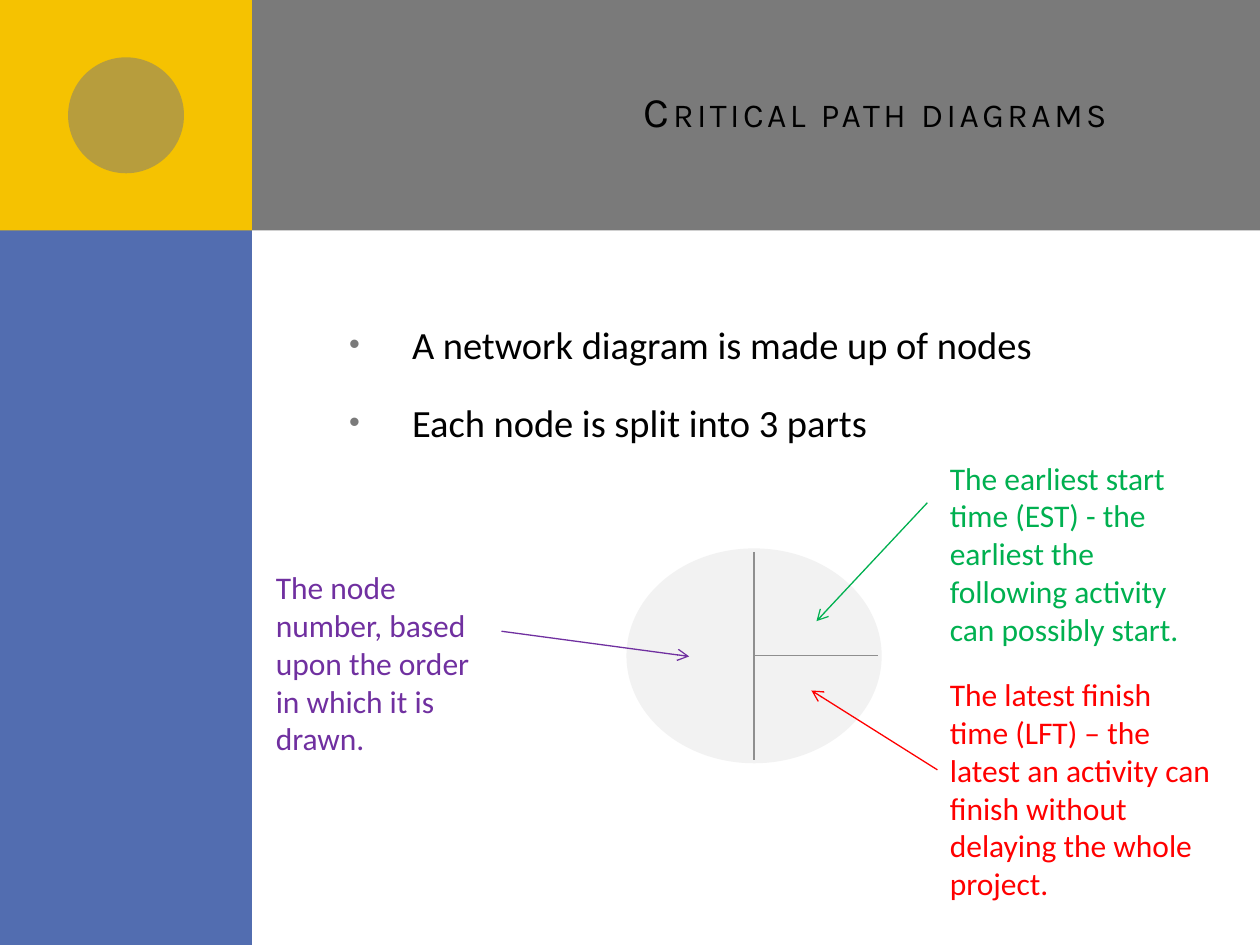
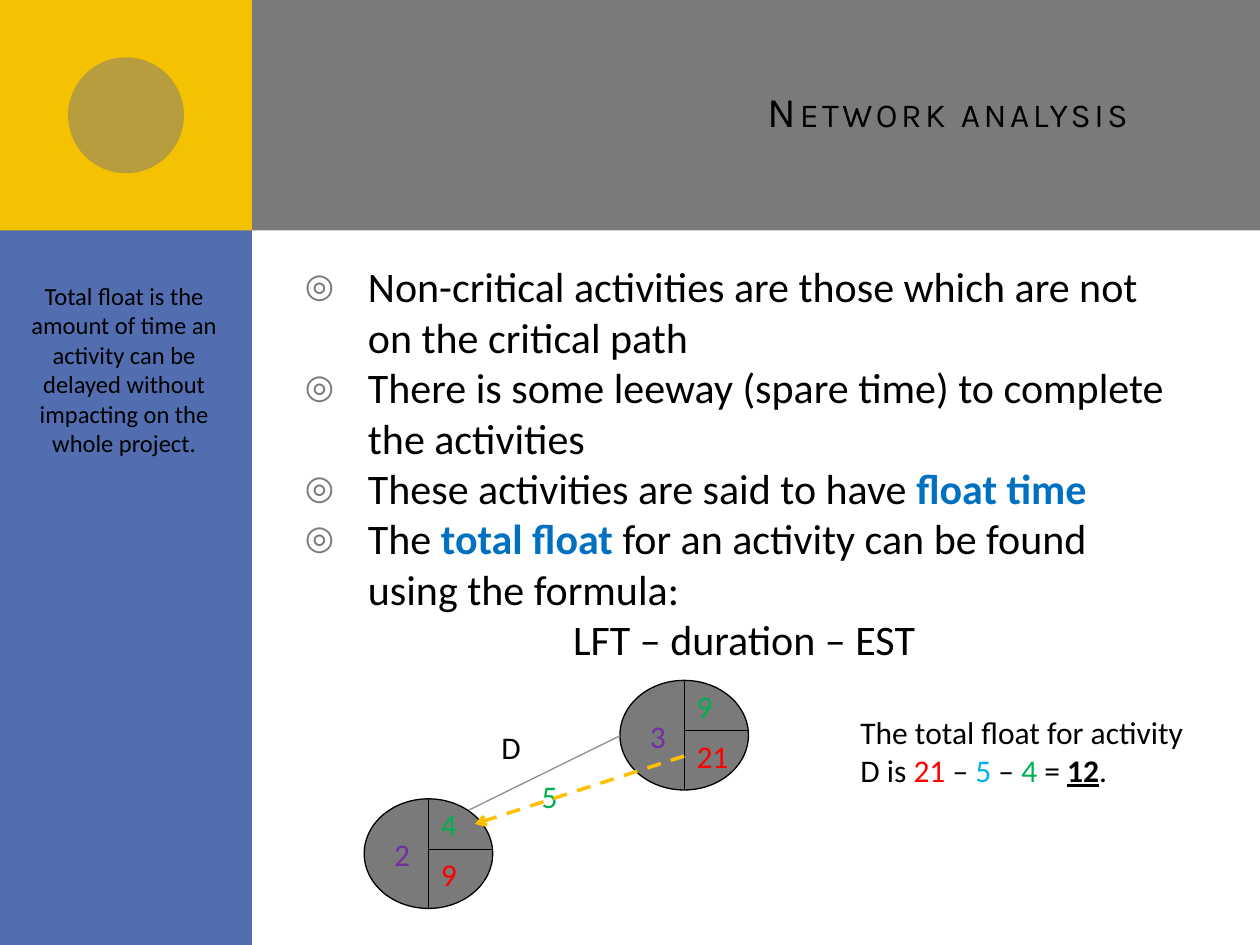
from lxml.etree import SubElement
from pptx import Presentation
from pptx.dml.color import RGBColor
from pptx.enum.dml import MSO_LINE
from pptx.enum.shapes import MSO_CONNECTOR, MSO_SHAPE
from pptx.enum.text import MSO_ANCHOR, MSO_AUTO_SIZE, PP_ALIGN
from pptx.oxml.ns import qn
from pptx.util import Inches, Pt

BLACK = RGBColor(0, 0, 0)
GREY = RGBColor(0x7A, 0x7A, 0x7A)
RULE = RGBColor(0x8F, 0x8F, 0x8F)
PALE = RGBColor(0xF2, 0xF2, 0xF2)
BLUE = RGBColor(0x52, 0x6D, 0xB0)
GOLD = RGBColor(0xF5, 0xC2, 0x01)
AMBER = RGBColor(0xFF, 0xC0, 0x00)
PURPLE = RGBColor(0x70, 0x30, 0xA0)
GREEN = RGBColor(0x00, 0xB0, 0x50)
RED = RGBColor(0xFF, 0, 0)
TERM = RGBColor(0x00, 0x70, 0xC0)
SKY = RGBColor(0x00, 0xB0, 0xF0)

COLS, ROWS = 100, 75
CELL = Inches(0.1)
HEAD, SIDE = 18.3, 20  # rows of the top band, columns of the side band


def grid(*cells):
    """Turn columns and rows into lengths."""
    return [round(cell * CELL) for cell in cells]


def place(shape, box):
    shape.left, shape.top, shape.width, shape.height = grid(*box)


def draw(slide, kind, box, fill, line=None, width=0.75):
    shape = slide.shapes.add_shape(kind, *grid(*box))
    shape.shadow.inherit = False
    shape.fill.solid()
    shape.fill.fore_color.rgb = fill
    if line is None:
        shape.line.fill.background()
    else:
        shape.line.color.rgb = line
        shape.line.width = Pt(width)
    return shape


def link(slide, start, end, color, width=0.75, arrow=False, dash=None):
    line = slide.shapes.add_connector(MSO_CONNECTOR.STRAIGHT, *grid(*start, *end))
    line.line.color.rgb = color
    line.line.width = Pt(width)
    if dash:
        line.line.dash_style = dash
    props = line.element.spPr
    if arrow:
        SubElement(props.find(qn("a:ln")), qn("a:tailEnd"), type="arrow")
    SubElement(props, qn("a:effectLst"))


def write(para, text, size, color=BLACK, face="Calibri"):
    """Fill a paragraph with a string or with (text, colour, bold, underline) runs."""
    runs = [(text,)] if isinstance(text, str) else text
    for words, *_ in runs:
        para.add_run().text = words
    for part in (para, *para.runs):
        part.font.name = face
        part.font.size = Pt(size)
        part.font.bold = False
        part.font.color.rgb = color
    for run, (_, *marks) in zip(para.runs, runs):
        tint, bold, under = (marks + [color, False, False][len(marks):])
        run.font.color.rgb = tint
        run.font.bold = bold
        run.font.underline = under


def note(slide, box, text, color=BLACK, size=18, align=PP_ALIGN.LEFT):
    frame = slide.shapes.add_textbox(*grid(*box)).text_frame
    frame.word_wrap = True
    frame.auto_size = MSO_AUTO_SIZE.SHAPE_TO_FIT_TEXT
    frame.paragraphs[0].alignment = align
    write(frame.paragraphs[0], text, size, color)


def head(slide, text):
    title = slide.shapes.title
    frame = title.text_frame
    frame.vertical_anchor = MSO_ANCHOR.MIDDLE
    frame.auto_size = MSO_AUTO_SIZE.NONE
    frame.paragraphs[0].alignment = PP_ALIGN.RIGHT
    write(frame.paragraphs[0], text, 24, face="Karla")
    for props in title.element.xpath(".//a:rPr"):
        props.set("cap", "small")
        props.set("spc", "200")


def items(slide, lines, size, mark, gap=0, last=None):
    """Fill the body with bulleted lines and an optional centred last line."""
    frame = slide.placeholders[1].text_frame
    frame.auto_size = MSO_AUTO_SIZE.NONE
    for row, text in enumerate(lines + ([last] if last else [])):
        para = frame.add_paragraph() if row else frame.paragraphs[0]
        para.space_before = Pt(gap)
        props = para._p.get_or_add_pPr()
        props.set("marL", str(Inches(0.5)))
        props.set("indent", str(-Inches(0.5)))
        if text is last:
            para.alignment = PP_ALIGN.CENTER
            SubElement(props, qn("a:buNone"))
        else:
            tint = SubElement(props, qn("a:buClr"))
            SubElement(tint, qn("a:srgbClr"), val=str(GREY))
            SubElement(props, qn("a:buSzPct"), val="80000")
            SubElement(props, qn("a:buChar"), char=mark)
        write(para, text, size)


def node(slide, kind, box, split, fill, edge, width, rule):
    """Draw a node: left half, and a right half cut at the given row."""
    x, y, w, h = box
    mid = x + w / 2
    draw(slide, kind, box, fill, edge, width)
    link(slide, (mid, y), (mid, y + h), rule)
    link(slide, (mid, y + split), (x + w, y + split), rule)


def event(slide, x, y, name, start, finish):
    """Draw a small node with its number, EST and LFT."""
    w, split = 10.2, 4
    node(slide, MSO_SHAPE.FLOWCHART_CONNECTOR, (x, y, w, 8.7), split,
         GREY, BLACK, 0.75, BLACK)
    mid = x + w / 2
    note(slide, (x + 1.4, y + 2.4, 2.9, 4), name, PURPLE)
    note(slide, (mid, y, 4.4, 4), start, GREEN)
    note(slide, (mid, y + split, 5, 4), finish, RED)


def dress(layout, slide):
    """Put the shared bands on the layout and place its title and body."""
    rect = MSO_SHAPE.RECTANGLE
    size = 9.2
    bands = [
        draw(slide, rect, (5, 0, COLS - 5, HEAD), GREY),
        draw(slide, rect, (0, 0, SIDE, ROWS), BLUE),
        draw(slide, rect, (0, 0, SIDE, HEAD), GOLD),
        draw(slide, MSO_SHAPE.OVAL,
             ((SIDE - size) / 2, (HEAD - size) / 2, size, size), GREY),
    ]
    tint = bands[-1].element.spPr.find(".//" + qn("a:srgbClr"))
    SubElement(tint, qn("a:alpha"), val="50000")
    for rank, band in enumerate(bands):
        band.element.xpath(".//p:cNvPr")[0].set("id", str(50 + rank))
        layout.shapes.element.insert(2 + rank, band.element)
    place(layout.placeholders[0], (26.7, 2.5, 68.3, 12.5))
    place(layout.placeholders[1], (26.7, 25, 68.3, 42))


def paths(slide):
    head(slide, "Critical path diagrams")
    items(slide, ["A network diagram is made up of nodes",
                  "Each node is split into 3 parts"], 22, "•", 18)
    node(slide, MSO_SHAPE.OVAL, (50, 43.8, 19.7, 16.5), 8.25, PALE, PALE, 4, RULE)
    parts = [
        (PURPLE, (39.8, 50.1), (54.7, 52.1), (20.9, 44.6, 18.1, 16.2),
         "The node number, based upon the order in which it is drawn."),
        (GREEN, (73.6, 39.9), (64.8, 49.3), (74.4, 35.9, 20.5, 16.2),
         "The earliest start time (EST) - the earliest the following "
         "activity can possibly start."),
        (RED, (74.4, 61.1), (64.4, 54.8), (74.4, 53.1, 22.8, 19.2),
         "The latest finish time (LFT) – the latest an activity can finish "
         "without delaying the whole project."),
    ]
    for color, start, end, box, text in parts:
        link(slide, start, end, color, arrow=True)
        note(slide, box, text, color)


def floats(slide):
    head(slide, "Network analysis")
    place(slide.placeholders[1], (23.2, 20.2, 71.7, 42))
    items(slide, [
        "Non-critical activities are those which are not on the critical path",
        "There is some leeway (spare time) to complete the activities",
        [("These activities are said to have ",), ("float time", TERM, True)],
        [("The ",), ("total float ", TERM, True),
         ("for an activity can be found using the formula:",)],
    ], 24, "◎", last="LFT – duration – EST")
    event(slide, 28.9, 63.4, "2", "4", "9")
    event(slide, 49.2, 54, "3", "9", "21")
    link(slide, (37.2, 64.3), (49.2, 58.4), RULE)
    note(slide, (38.8, 57.3, 6.1, 4), "D")
    note(slide, (42, 61.2, 6.2, 4), "5", GREEN)
    link(slide, (54.3, 60), (37.7, 65.4), AMBER, 2, True, MSO_LINE.DASH)
    note(slide, (67.3, 56.1, 29.1, 7.1), [
        ("The total float for activity D is ",), ("21", RED), (" – ",),
        ("5", SKY), (" – ",), ("4", GREEN), (" = ",),
        ("12", BLACK, True, True), (".",)])
    note(slide, (0.4, 21.8, 18.9, 15.1),
         "Total float is the amount of time an activity can be delayed "
         "without impacting on the whole project.",
         size=14, align=PP_ALIGN.CENTER)


def main():
    deck = Presentation()
    deck.slide_width, deck.slide_height = grid(COLS, ROWS)
    layout = deck.slide_layouts[1]
    first, second = [deck.slides.add_slide(layout) for _ in range(2)]
    dress(layout, first)
    paths(first)
    floats(second)
    deck.save("out.pptx")


if __name__ == "__main__":
    main()
